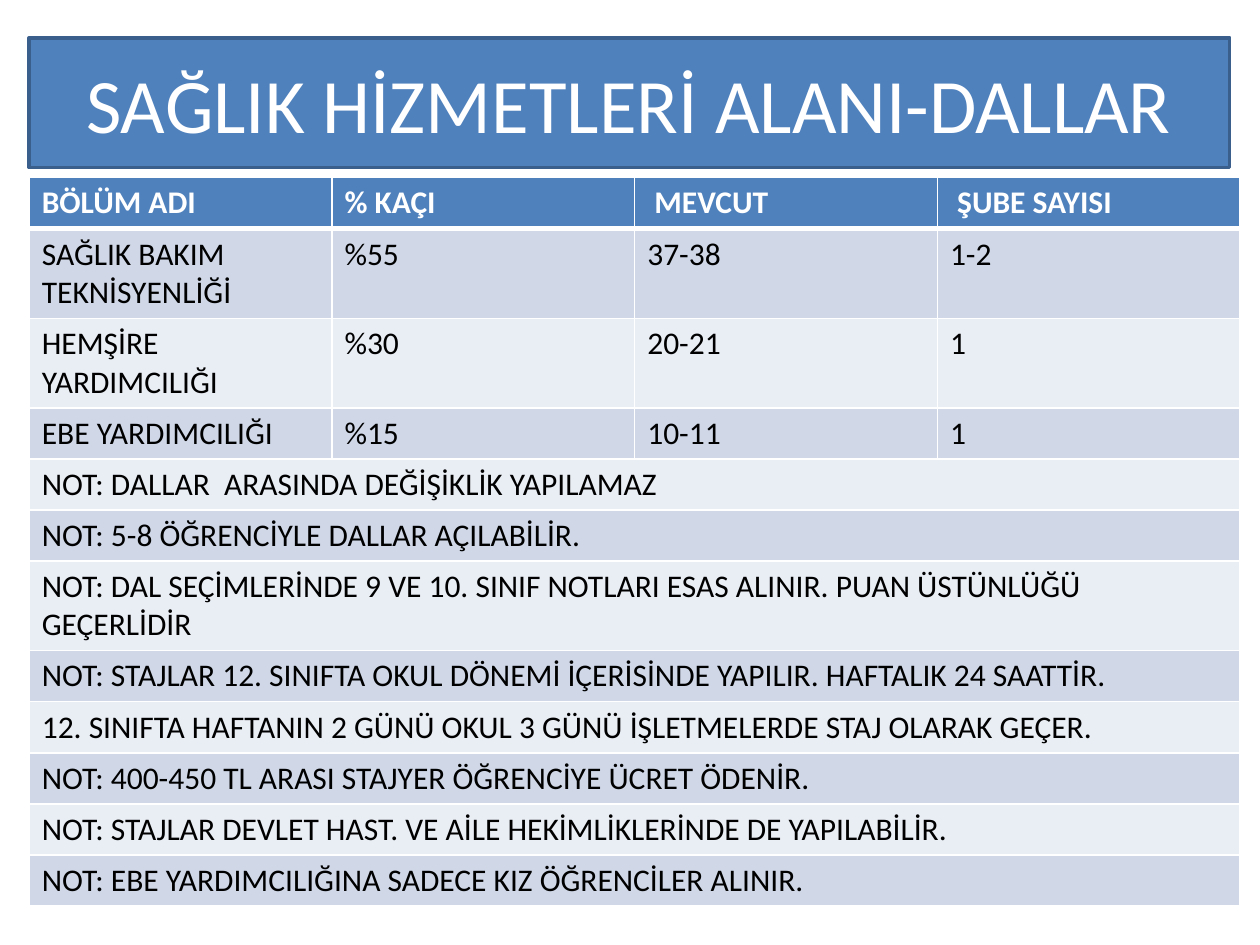
from dataclasses import dataclass

from lxml import etree
from pptx import Presentation
from pptx.dml.color import RGBColor
from pptx.enum.text import MSO_ANCHOR, MSO_AUTO_SIZE, PP_ALIGN
from pptx.oxml.ns import qn
from pptx.util import Pt

MIDDLE = MSO_ANCHOR.MIDDLE
CENTER = PP_ALIGN.CENTER
NO_AUTOFIT = MSO_AUTO_SIZE.NONE
TITLE_ONLY = 5


@dataclass(frozen=True)
class Theme:
    font: str = "Calibri"
    title_size: int = 44
    table_size: int = 18
    accent: str = "4F81BD"
    accent_line: str = "3A5F8C"
    bands: tuple = ("D0D8E8", "E9EDF4")
    white: str = "FFFFFF"
    black: str = "000000"


theme = Theme()


def style_font(font, size, color, bold=False):
    font.name = theme.font
    font.size = Pt(size)
    font.bold = bold
    font.color.rgb = RGBColor.from_string(color)


def set_borders(cell, bottom_width):
    properties = cell._tc.get_or_add_tcPr()
    widths = {"a:lnL": 1, "a:lnR": 1, "a:lnT": 1, "a:lnB": bottom_width}
    for position, (tag, width) in enumerate(widths.items()):
        line = etree.Element(qn(tag), w=str(Pt(width)))
        fill = etree.SubElement(line, qn("a:solidFill"))
        etree.SubElement(fill, qn("a:srgbClr"), val=theme.white)
        properties.insert(position, line)


deck = Presentation()
deck.slide_width, deck.slide_height = Pt(720), Pt(540)
page = deck.slides.add_slide(deck.slide_layouts[TITLE_ONLY])

# Title banner
title = page.shapes.title
title.left, title.top, title.width, title.height = Pt(16.7), Pt(21.6), Pt(686), Pt(74.2)
title.fill.solid()
title.fill.fore_color.rgb = RGBColor.from_string(theme.accent)
title.line.color.rgb = RGBColor.from_string(theme.accent_line)
title.line.width = Pt(2)
frame = title.text_frame
frame.text = "SAĞLIK HİZMETLERİ ALANI-DALLAR"
frame.word_wrap = True
frame.auto_size = NO_AUTOFIT
frame.vertical_anchor = MIDDLE
frame.paragraphs[0].alignment = CENTER
style_font(frame.paragraphs[0].font, theme.title_size, theme.white)

# Table content: a row with one text spans all columns
rows = [
    ["BÖLÜM ADI", "% KAÇI", " MEVCUT", " ŞUBE SAYISI"],
    ["SAĞLIK BAKIM TEKNİSYENLİĞİ", "%55", "37-38", "1-2"],
    ["HEMŞİRE YARDIMCILIĞI", "%30", "20-21", "1"],
    ["EBE YARDIMCILIĞI", "%15", "10-11", "1"],
    ["NOT: DALLAR  ARASINDA DEĞİŞİKLİK YAPILAMAZ"],
    ["NOT: 5-8 ÖĞRENCİYLE DALLAR AÇILABİLİR."],
    ["NOT: DAL SEÇİMLERİNDE 9 VE 10. SINIF NOTLARI ESAS ALINIR. PUAN ÜSTÜNLÜĞÜ GEÇERLİDİR"],
    ["NOT: STAJLAR 12. SINIFTA OKUL DÖNEMİ İÇERİSİNDE YAPILIR. HAFTALIK 24 SAATTİR."],
    ["12. SINIFTA HAFTANIN 2 GÜNÜ OKUL 3 GÜNÜ İŞLETMELERDE STAJ OLARAK GEÇER."],
    ["NOT: 400-450 TL ARASI STAJYER ÖĞRENCİYE ÜCRET ÖDENİR."],
    ["NOT: STAJLAR DEVLET HAST. VE AİLE HEKİMLİKLERİNDE DE YAPILABİLİR."],
    ["NOT: EBE YARDIMCILIĞINA SADECE KIZ ÖĞRENCİLER ALINIR."],
]
two_line_rows = {1, 2, 6}
column_count = len(rows[0])
row_heights = [51 if index in two_line_rows else 29.2 for index in range(len(rows))]

# Table
table = page.shapes.add_table(
    len(rows), column_count, Pt(16.7), Pt(101.5), Pt(692), Pt(sum(row_heights))
).table
for row_index, texts in enumerate(rows):
    is_header = row_index == 0
    fill_color = theme.accent if is_header else theme.bands[(row_index - 1) % 2]
    text_color = theme.white if is_header else theme.black
    table.rows[row_index].height = Pt(row_heights[row_index])
    for column_index in range(column_count):
        cell = table.cell(row_index, column_index)
        cell.fill.solid()
        cell.fill.fore_color.rgb = RGBColor.from_string(fill_color)
        set_borders(cell, bottom_width=3 if is_header else 1)
        if column_index < len(texts):
            cell.text = texts[column_index]
        style_font(cell.text_frame.paragraphs[0].font, theme.table_size, text_color, is_header)
    if len(texts) == 1:
        table.cell(row_index, 0).merge(table.cell(row_index, column_count - 1))

deck.save("out.pptx")
